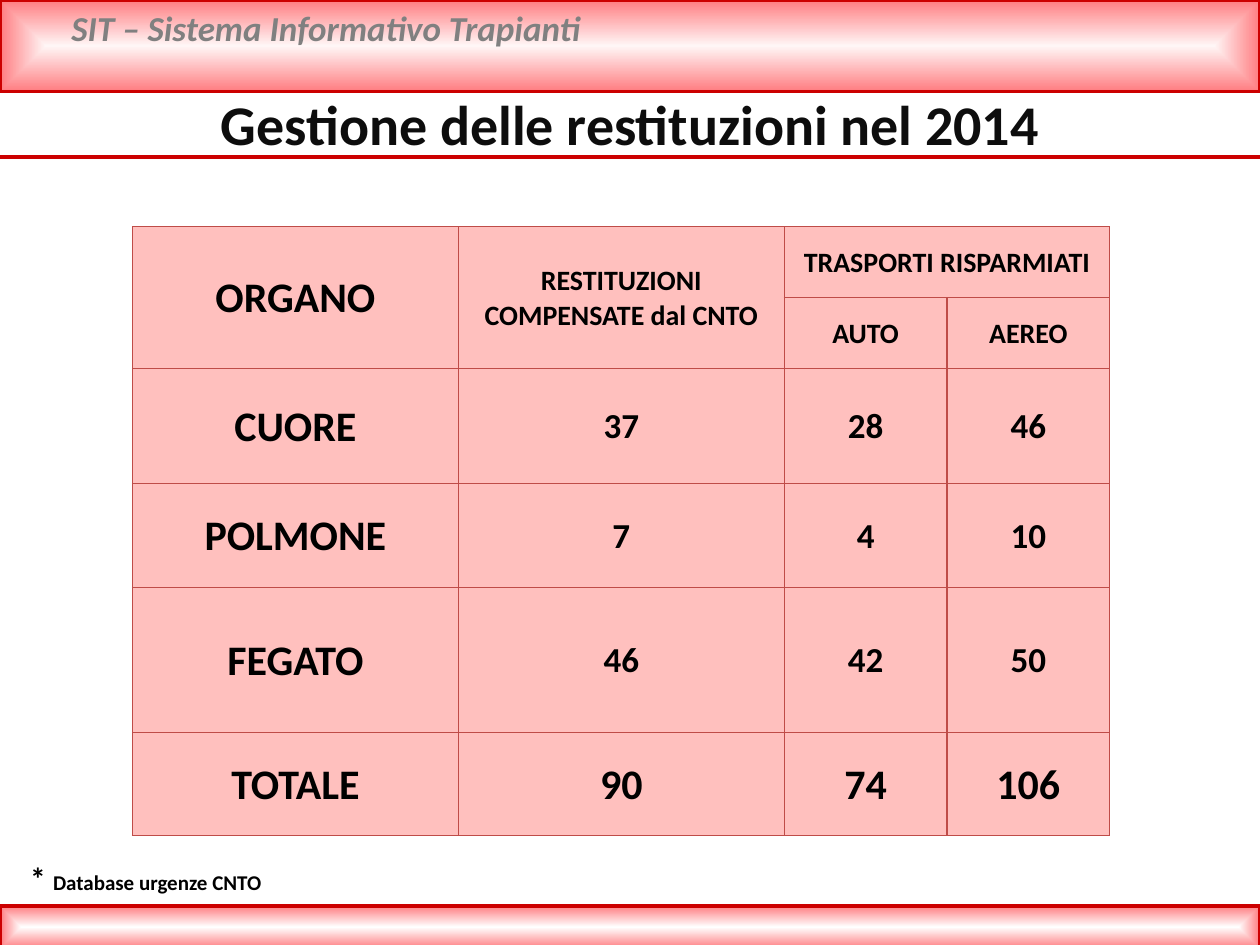
from dataclasses import dataclass

import pptx
import pptx.dml.color
import pptx.enum.dml
import pptx.enum.shapes
import pptx.enum.text
import pptx.oxml
import pptx.oxml.ns
import pptx.util
from lxml import etree
from pptx.dml.color import RGBColor
from pptx.util import Cm, Pt

FONT = "Calibri"
RED = RGBColor(0xCC, 0x00, 0x00)
ROSE = RGBColor(0xFF, 0x7C, 0x80)
PALE_ROSE = RGBColor(0xFF, 0xF6, 0xF6)
WHITE = RGBColor(0xFF, 0xFF, 0xFF)
GRAY = RGBColor(0x80, 0x80, 0x80)
BLACK = RGBColor(0x00, 0x00, 0x00)
TITLE_BLACK = RGBColor(0x0D, 0x0D, 0x0D)
CELL_FILL = RGBColor(0xFF, 0xC0, 0xBE)
CELL_BORDER = RGBColor(0xBF, 0x4C, 0x48)

LEFT = pptx.enum.text.PP_ALIGN.LEFT
CENTER = pptx.enum.text.PP_ALIGN.CENTER
SLIDE_WIDTH = Cm(25.4)
COLUMN_WIDTHS = (6.57, 6.57, 3.28, 3.28)
ROW_HEIGHTS = (1.43, 1.43, 2.32, 2.1, 2.92, 2.08)


@dataclass(frozen=True)
class Run:
    text: str
    size: int
    color: RGBColor = BLACK
    italic: bool = False


@dataclass(frozen=True)
class Band:
    top: float
    height: float
    center_color: RGBColor


@dataclass(frozen=True)
class Label:
    left: float
    top: float
    width: float
    height: float
    runs: tuple[Run, ...]
    alignment: pptx.enum.text.PP_ALIGN = LEFT


@dataclass(frozen=True)
class TableCell:
    row: int
    column: int
    text: str
    size: int
    row_span: int = 1
    column_span: int = 1


BANDS = (Band(0, 1.85, PALE_ROSE), Band(18.26, 0.86, WHITE))

LABELS = (
    Label(1.19, 0, 22.81, 1.12,
          (Run("SIT – Sistema Informativo Trapianti", 20, GRAY, italic=True),)),
    Label(0.36, 17.2, 8.41, 1.02,
          (Run("* ", 18), Run("Database urgenze CNTO", 12))),
    Label(1.85, 1.68, 21.72, 1.63,
          (Run("Gestione delle restituzioni nel 2014", 32, TITLE_BLACK),), CENTER),
)

HEADER_CELLS = (
    TableCell(0, 0, "ORGANO", 24, row_span=2),
    TableCell(0, 1, "RESTITUZIONI\nCOMPENSATE dal CNTO", 16, row_span=2),
    TableCell(0, 2, "TRASPORTI RISPARMIATI", 16, column_span=2),
    TableCell(1, 2, "AUTO", 16),
    TableCell(1, 3, "AEREO", 16),
)

# organ, size of the figures, compensated returns, car trips, flights
ORGAN_ROWS = (
    ("CUORE", 20, 37, 28, 46),
    ("POLMONE", 20, 7, 4, 10),
    ("FEGATO", 20, 46, 42, 50),
    ("TOTALE", 24, 90, 74, 106),
)


def add_text_run(paragraph, run: Run) -> None:
    """Add a bold run, turning newlines into line breaks."""
    for index, line in enumerate(run.text.split("\n")):
        if index:
            paragraph.add_line_break()
        text_run = paragraph.add_run()
        text_run.text = line
        font = text_run.font
        font.name, font.size, font.bold = FONT, Pt(run.size), True
        font.italic = run.italic
        font.color.rgb = run.color


def add_band(slide, band: Band) -> None:
    """Add a full-width bar whose colour fades from its centre to its edges."""
    shape = slide.shapes.add_shape(
        pptx.enum.shapes.MSO_SHAPE.RECTANGLE,
        0, Cm(band.top), SLIDE_WIDTH, Cm(band.height))
    shape.shadow.inherit = False
    shape.line.color.rgb = RED
    shape.line.width = Pt(2)
    shape.fill.gradient()
    for stop, color in zip(shape.fill.gradient_stops, (band.center_color, ROSE)):
        stop.color.rgb = color
    qn = pptx.oxml.ns.qn
    gradient = shape.element.spPr.find(qn("a:gradFill"))
    linear = gradient.find(qn("a:lin"))
    shape_path = etree.Element(qn("a:path"), {"path": "shape"})
    etree.SubElement(shape_path, qn("a:fillToRect"),
                     {side: "50000" for side in "ltrb"})
    gradient.replace(linear, shape_path)


def add_title_rule(slide) -> None:
    connector = slide.shapes.add_connector(
        pptx.enum.shapes.MSO_CONNECTOR.STRAIGHT, 0, Cm(3.17), SLIDE_WIDTH, Cm(3.17))
    connector.line.color.rgb = RED
    connector.line.width = Pt(2)
    etree.SubElement(connector.element.spPr, pptx.oxml.ns.qn("a:effectLst"))


def add_label(slide, label: Label) -> None:
    text_box = slide.shapes.add_textbox(
        Cm(label.left), Cm(label.top), Cm(label.width), Cm(label.height))
    text_frame = text_box.text_frame
    text_frame.word_wrap = True
    paragraph = text_frame.paragraphs[0]
    paragraph.alignment = label.alignment
    for run in label.runs:
        add_text_run(paragraph, run)


def style_cell(cell) -> None:
    """Give a cell its four borders, its fill and its narrow margins."""
    qn = pptx.oxml.ns.qn
    cell.margin_left = cell.margin_right = cell.margin_top = Cm(0.03)
    cell.margin_bottom = 0
    cell.vertical_anchor = pptx.enum.text.MSO_ANCHOR.MIDDLE
    properties = cell._tc.get_or_add_tcPr()
    for side in "LRTB":
        border = etree.SubElement(properties, qn(f"a:ln{side}"), {"w": str(Pt(0.75))})
        fill = etree.SubElement(border, qn("a:solidFill"))
        etree.SubElement(fill, qn("a:srgbClr"), {"val": str(CELL_BORDER)})
    cell.fill.solid()
    cell.fill.fore_color.rgb = CELL_FILL


def fill_cell(table, entry: TableCell) -> None:
    cell = table.cell(entry.row, entry.column)
    if entry.row_span > 1 or entry.column_span > 1:
        cell.merge(table.cell(entry.row + entry.row_span - 1,
                              entry.column + entry.column_span - 1))
    paragraph = cell.text_frame.paragraphs[0]
    paragraph.alignment = CENTER
    add_text_run(paragraph, Run(entry.text, entry.size))


def add_returns_table(slide) -> None:
    table = slide.shapes.add_table(
        len(ROW_HEIGHTS), len(COLUMN_WIDTHS), Cm(2.67), Cm(4.57),
        Cm(sum(COLUMN_WIDTHS)), Cm(sum(ROW_HEIGHTS))).table
    table.first_row = table.horz_banding = False
    for column, width in zip(table.columns, COLUMN_WIDTHS):
        column.width = Cm(width)
    for row, height in zip(table.rows, ROW_HEIGHTS):
        row.height = Cm(height)
    for cell in table.iter_cells():
        style_cell(cell)
    for entry in HEADER_CELLS:
        fill_cell(table, entry)
    for row_index, (organ, size, *figures) in enumerate(ORGAN_ROWS, start=2):
        fill_cell(table, TableCell(row_index, 0, organ, 24))
        for column_index, figure in enumerate(figures, start=1):
            fill_cell(table, TableCell(row_index, column_index, str(figure), size))


def main() -> None:
    presentation = pptx.Presentation()
    presentation.slide_width = SLIDE_WIDTH
    presentation.slide_height = Cm(19.05)
    slide = presentation.slides.add_slide(presentation.slide_layouts[6])
    for band in BANDS:
        add_band(slide, band)
    add_title_rule(slide)
    add_returns_table(slide)
    for label in LABELS:
        add_label(slide, label)
    presentation.save("out.pptx")


if __name__ == "__main__":
    main()
